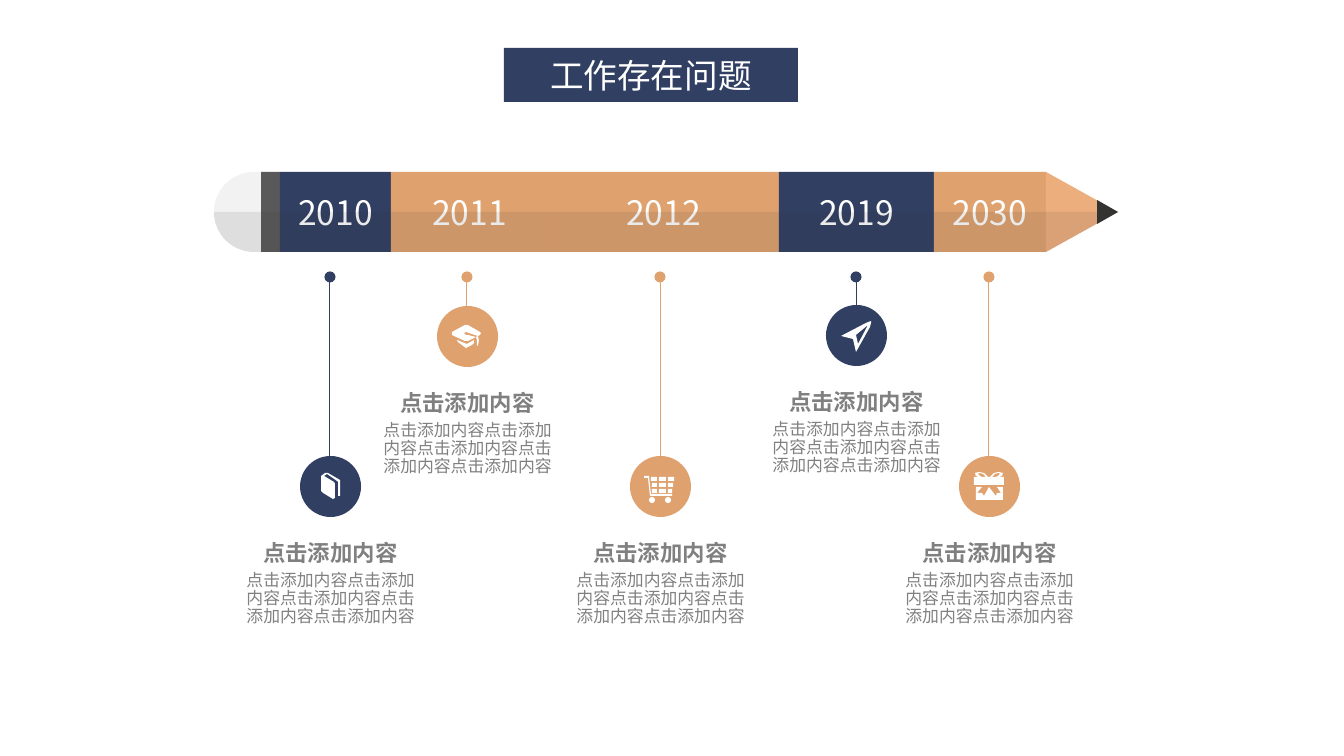
"""Build a one-slide pencil timeline with five milestones."""
from dataclasses import dataclass
from math import cos, pi, sin

from lxml.etree import SubElement
from pptx import Presentation
from pptx.dml.color import RGBColor
from pptx.enum.shapes import MSO_CONNECTOR, MSO_SHAPE
from pptx.enum.text import MSO_ANCHOR, PP_ALIGN
from pptx.oxml.ns import qn
from pptx.util import Pt

TITLE = "工作存在问题"
HEADING = "点击添加内容"
BODY = HEADING * 5

SEGMENTS = [("2010", 280, "navy"), ("2011", 391, "tan"), ("2012", 548, "tan"),
            ("2019", 779, "navy"), ("2030", 934, "tan")]
MILESTONES = [("plane", 856, 335, 316, "navy"), ("book", 330, 486, 481, "navy"),
              ("cap", 467, 336, 316, "tan"), ("cart", 660, 486, 481, "tan"),
              ("gift", 989, 486, 481, "tan")]

BASKET = [[(left + (row > 0 and left == -9), top), (right - row * (right == 14), top),
           (right - row * (right == 14), top + 4), (left + (row > 0 and left == -9), top + 4)]
          for row, top in enumerate((-9, -3, 3))
          for left, right in ((-9, -3), (-1, 6), (8, 14))]
BOW = [[(1, -9), (5, -13), (10, -14), (14, -13), (13, -10), (9, -9)],
       [(3, -9), (6, -12), (10, -13), (11, -12), (9, -10), (7, -9)]]
ICONS = {
    "book": [[(10, -6), (-2, -13), (-5, -13), (-9, -10), (-9, 5), (-7, 7), (3, 13), (5, 12),
              (5, -2), (4, -4), (-6, -10), (-3, -12), (7, -5), (8, -4), (8, 10), (10, 10)]],
    "cap": [[(13, -4), (1, -11), (-2, -11), (-15, -4), (-15, -1), (-2, 5), (1, 5), (9, 1),
             (1, -1), (-1, -1), (-3, -3), (-1, -4), (2, -3), (11, 0), (13, -1), (14, -3)],
            [(-10, 4), (-9, 6), (-5, 9), (-1, 12), (1, 11), (5, 9), (7, 7), (7, 4), (0, 8)],
            [(9, 1), (10, 4), (10, 9), (11, 10), (12, 4), (11, 0)]],
    "plane": [[(15, -14), (10, -12), (-15, 1), (-3, 4), (0, 17), (14, -8), (15, -12)],
              [(12, -10), (2, 9), (0, 0)]],
    "cart": [[(-11, -10), (-16, -10), (-16, -8), (-12, -8), (-10, 10), (12, 10), (12, 8),
              (-9, 8)]] + BASKET,
    "gift": [[(14, 1), (8, 1), (12, 7), (8, 7), (7, 10), (0, 1), (-5, 10), (-7, 7),
              (-12, 7), (-7, 1), (-13, 1), (-13, 14), (14, 14)],
             [(-15, -9), (15, -9), (15, -1), (-15, -1)]]
            + BOW + [[(-x, y) for x, y in loop] for loop in BOW],
}
WHEELS = [-11, 5]

TOP, MIDDLE, BOTTOM = 172, 212, 252
ERASER_CENTRE, RADIUS, FERRULE_LEFT = 254, 40, 261
BARREL_LEFT, BARREL_RIGHT, TIP, LEAD_LEFT = 280, 1046, 1118, 1097
DOT_Y, CIRCLE = 277, 61
SCALE = 914400 / 134.4


@dataclass(frozen=True)
class Theme:
    navy: str = "303F62"
    tan: str = "DFA26F"
    wood: str = "ECAE7D"
    dark: str = "333333"
    ferrule: str = "595959"
    eraser: str = "F2F2F2"
    white: str = "FFFFFF"
    grey: str = "808080"
    latin: str = "Arial"
    font: str = "Noto Sans CJK SC"
    large: int = 18
    heading: int = 12
    body: int = 9


THEME = Theme()


def px(value):
    return round(value * SCALE)


def paint(shape, color, alpha=None):
    shape.shadow.inherit = False
    shape.fill.solid()
    shape.fill.fore_color.rgb = RGBColor.from_string(color)
    shape.line.fill.background()
    if alpha:
        solid = shape.fill._xPr.find(qn("a:solidFill"))
        SubElement(solid[0], qn("a:alpha"), val=str(alpha * 1000))
    return shape


def add_preset(page, kind, box, color, alpha=None):
    return paint(page.shapes.add_shape(kind, *map(px, box)), color, alpha)


def add_outline(page, contours, color, alpha=None, origin=(0, 0)):
    scaled = [[(px(x), px(y)) for x, y in contour] for contour in contours]
    builder = page.shapes.build_freeform(*scaled[0][0], scale=1.0)
    for index, contour in enumerate(scaled):
        if index:
            builder.move_to(*contour[0])
        builder.add_line_segments(contour[1:], close=True)
    return paint(builder.convert_to_shape(*map(px, origin)), color, alpha)


def write(shape, text, size, color, font=THEME.font, bold=None, **frame_format):
    frame = shape.text_frame
    for name, value in {"word_wrap": True, **frame_format}.items():
        setattr(frame, name, value)
    para = frame.paragraphs[0]
    para.alignment = PP_ALIGN.CENTER
    span = para.add_run()
    span.text = text
    for name, value in {"size": Pt(size), "name": font, "bold": bold}.items():
        setattr(span.font, name, value)
    span.font.color.rgb = RGBColor.from_string(color)
    SubElement(span._r.get_or_add_rPr(), qn("a:ea"), typeface=THEME.font)
    return para


def add_caption(page, box, text, size, bold=None):
    label = page.shapes.add_textbox(*map(px, box))
    margins = {f"margin_{side}": 0 for side in ("left", "top", "right", "bottom")}
    para = write(label, text, size, THEME.grey, bold=bold, **margins)
    para.line_spacing, para.space_before = 0.9, Pt(7.5)


def add_stem(page, x, start, color):
    stem = page.shapes.add_connector(MSO_CONNECTOR.STRAIGHT, px(x), px(start), px(x), px(DOT_Y))
    stem.line.color.rgb = RGBColor.from_string(color)
    stem.line.width = Pt(0.5)
    SubElement(stem.line._get_or_add_ln(), qn("a:tailEnd"), type="oval")
    SubElement(stem._element.spPr, qn("a:effectLst"))


def left_arc(first, last, steps=24):
    angles = [first + (last - first) * step / steps for step in range(steps + 1)]
    return [(ERASER_CENTRE - RADIUS * cos(angle), MIDDLE - RADIUS * sin(angle))
            for angle in angles]


def add_pencil(page):
    half = BOTTOM - MIDDLE
    add_outline(page, [left_arc(-pi / 2, pi / 2) + [(265, TOP), (265, BOTTOM)]], THEME.eraser)
    add_preset(page, MSO_SHAPE.RECTANGLE,
               (FERRULE_LEFT, TOP, BARREL_LEFT - FERRULE_LEFT, BOTTOM - TOP), THEME.ferrule)
    add_outline(page, [left_arc(-pi / 2, 0) + [(BARREL_LEFT, MIDDLE), (BARREL_LEFT, BOTTOM)]],
                THEME.dark, 10)
    ends = [left for _, left, _ in SEGMENTS[1:]] + [BARREL_RIGHT]
    for (year, left, color), right in zip(SEGMENTS, ends):
        segment = add_preset(page, MSO_SHAPE.RECTANGLE,
                             (left, TOP, right - left, BOTTOM - TOP), getattr(THEME, color))
        write(segment, year, THEME.large, THEME.white, vertical_anchor=MSO_ANCHOR.MIDDLE)
        add_preset(page, MSO_SHAPE.RECTANGLE, (left, MIDDLE, right - left, half), THEME.dark, 10)
    point = (TIP, MIDDLE)
    add_outline(page, [[point, (BARREL_RIGHT, TOP), (BARREL_RIGHT, BOTTOM)]], THEME.wood)
    add_outline(page, [[point, (LEAD_LEFT, MIDDLE + 12), (LEAD_LEFT, MIDDLE - 12)]], THEME.dark)
    add_outline(page, [[point, (BARREL_RIGHT, BOTTOM), (BARREL_RIGHT, MIDDLE)]], THEME.dark, 10)


def add_milestone(page, icon, x, y, start, color):
    fill = getattr(THEME, color)
    add_stem(page, x, start, fill)
    add_preset(page, MSO_SHAPE.OVAL, (x - 30, y - 30, CIRCLE, CIRCLE), fill)
    add_caption(page, (x - 84, y + 86, 169, 58), BODY, THEME.body)
    add_caption(page, (x - 85, y + 56, 171, 26), HEADING, THEME.heading, bold=True)
    add_outline(page, ICONS[icon], THEME.white, origin=(x, y))
    if icon == "cart":
        for offset in WHEELS:
            add_preset(page, MSO_SHAPE.OVAL, (x + offset, y + 11, 6, 6), THEME.white)


def main():
    deck = Presentation()
    deck.slide_width, deck.slide_height = px(1344), px(756)
    page = deck.slides.add_slide(deck.slide_layouts[6])
    banner = add_preset(page, MSO_SHAPE.RECTANGLE, (504, 48, 294, 54), THEME.navy)
    write(banner, TITLE, THEME.large, THEME.white, font=THEME.latin,
          vertical_anchor=MSO_ANCHOR.MIDDLE)
    add_pencil(page)
    for milestone in MILESTONES:
        add_milestone(page, *milestone)
    deck.save("out.pptx")


if __name__ == "__main__":
    main()
